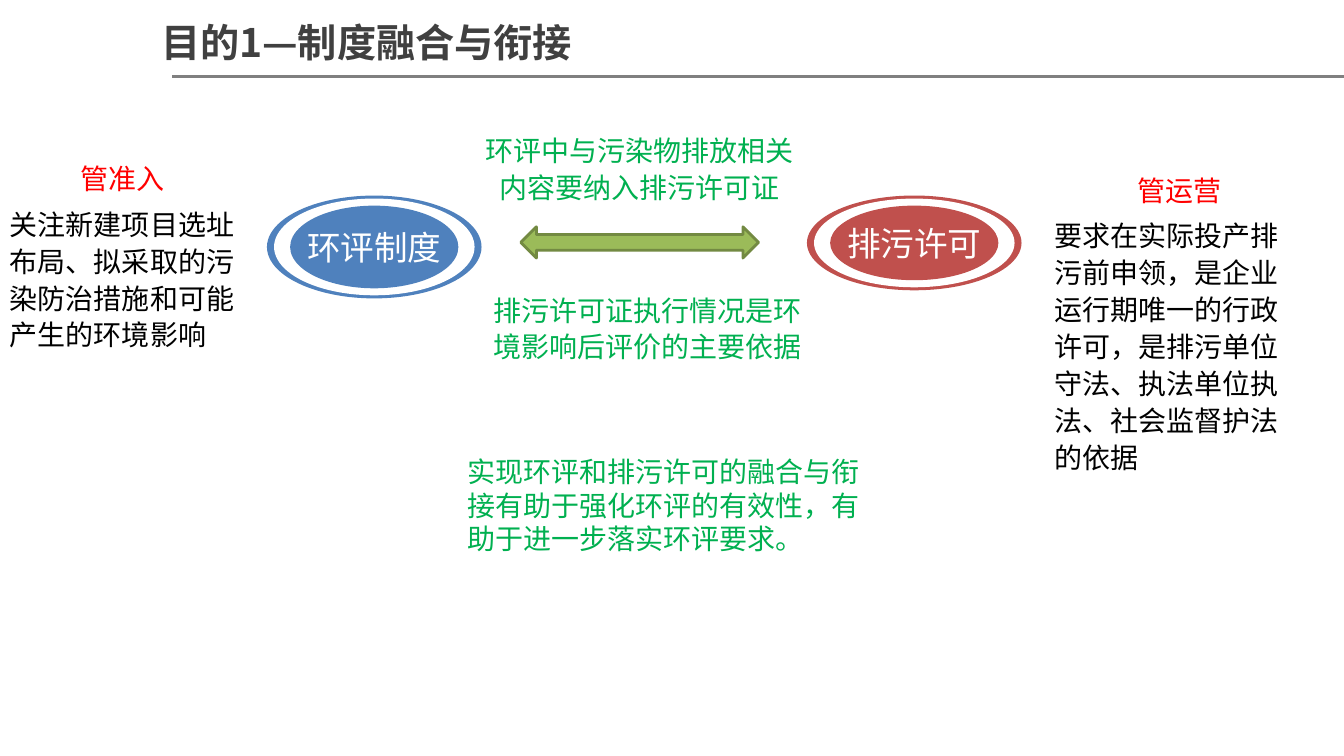
"""Build the slide on merging environmental assessment and discharge permits."""
import pptx
import pptx.dml.color
import pptx.enum.shapes
import pptx.enum.text
import pptx.oxml
import pptx.oxml.ns
import pptx.util

THEME = {
    "font": "Noto Sans CJK SC", "oval_font": "Arial",
    "title_size": 28, "oval_size": 24, "body_size": 20,
    "title": "404040", "rule": "808080", "heading": "FF0000", "body": "000000",
    "note": "00B050", "white": "FFFFFF", "assessment": "4F81BD",
    "permit": "C0504D", "arrow": "9BBB59", "arrow_line": "738A42",
}
PX = 9144
SLIDE = (1334, 750)
RULE = (171, 76, 1334, 76)
ARROW = (517, 225, 236, 31)
TITLE = ("目的1—制度融合与衔接", (150, 13, 635, 57))
COLUMNS = [
    ("管准入", "关注新建项目选址布局、拟采取的污染防治措施和可能产生的环境影响",
     (0, 123, 244, 260)),
    ("管运营", "要求在实际投产排污前申领，是企业运行期唯一的行政许可，"
     "是排污单位守法、执法单位执法、社会监督护法的依据", (1037, 170, 268, 299)),
]
LINKS = [
    ("环评中与污染物排放相关内容要纳入排污许可证", (462, 115, 346, 102)),
    ("排污许可证执行情况是环境影响后评价的主要依据", (470, 273, 346, 102)),
]
CONCLUSION = ("实现环评和排污许可的融合与衔接有助于强化环评的有效性，"
              "有助于进一步落实环评要求。", (454, 446, 410, 111))
OVALS = [
    ("环评制度", "assessment", (265, 194, 213, 102)),
    ("排污许可", "permit", (801, 194, 213, 94)),
]
RING_INSETS = [(0, 0), (7, 3), (23, 10)]


def emu(lengths):
    return [pptx.util.Emu(length * PX) for length in lengths]


def color(name):
    return pptx.dml.color.RGBColor.from_string(THEME[name])


def add_run(paragraph, text, color_name, size="body_size", font="font", bold=False):
    run = paragraph.add_run()
    run.text = text
    run.font.size = pptx.util.Pt(THEME[size])
    run.font.bold = bold
    run.font.color.rgb = color(color_name)
    run.font.name = THEME[font]
    east_asian = pptx.oxml.parse_xml(
        f'<a:ea {pptx.oxml.ns.nsdecls("a")} typeface="{THEME["font"]}"/>')
    run.font._element.find(pptx.oxml.ns.qn("a:latin")).addnext(east_asian)


def add_text(slide, box, middle=False):
    frame = slide.shapes.add_textbox(*emu(box)).text_frame
    frame.word_wrap = True
    if middle:
        frame.vertical_anchor = pptx.enum.text.MSO_ANCHOR.MIDDLE
        frame.paragraphs[0].alignment = pptx.enum.text.PP_ALIGN.CENTER
        frame.paragraphs[0].line_spacing = 1.1
    return frame


def add_filled(slide, kind, box, fill, line=None):
    shape = slide.shapes.add_shape(kind, *emu(box))
    shape.shadow.inherit = False
    shape.fill.solid()
    shape.fill.fore_color.rgb = color(fill)
    if line:
        shape.line.color.rgb = color(line)
        shape.line.width = pptx.util.Pt(2)
    else:
        shape.line.fill.background()
    return shape


def add_ringed_oval(slide, text, fill, box):
    left, top, width, height = box
    for (dx, dy), layer in zip(RING_INSETS, (fill, "white", fill)):
        inner = (left + dx, top + dy, width - 2 * dx, height - 2 * dy)
        shape = add_filled(slide, pptx.enum.shapes.MSO_SHAPE.OVAL, inner, layer)
    frame = shape.text_frame
    frame.word_wrap = False
    frame.margin_left = frame.margin_right = frame.margin_top = frame.margin_bottom = 0
    frame.vertical_anchor = pptx.enum.text.MSO_ANCHOR.MIDDLE
    frame.paragraphs[0].alignment = pptx.enum.text.PP_ALIGN.CENTER
    add_run(frame.paragraphs[0], text, "white", "oval_size", "oval_font")


def main():
    presentation = pptx.Presentation()
    presentation.slide_width, presentation.slide_height = emu(SLIDE)
    slide = presentation.slides.add_slide(presentation.slide_layouts[6])

    rule = slide.shapes.add_connector(
        pptx.enum.shapes.MSO_CONNECTOR.STRAIGHT, *emu(RULE))
    rule.line.color.rgb = color("rule")
    rule.line.width = pptx.util.Pt(2)
    rule._element.spPr.append(pptx.oxml.parse_xml(
        f'<a:effectLst {pptx.oxml.ns.nsdecls("a")}/>'))

    text, box = TITLE
    add_run(add_text(slide, box).paragraphs[0], text, "title", "title_size", bold=True)

    for heading, body, box in COLUMNS:
        frame = add_text(slide, box, middle=True)
        add_run(frame.paragraphs[0], heading, "heading")
        paragraph = frame.add_paragraph()
        paragraph.line_spacing = 1.1
        paragraph.space_before = pptx.util.Pt(6)
        add_run(paragraph, body, "body")

    for text, fill, box in OVALS:
        add_ringed_oval(slide, text, fill, box)
    for text, box in LINKS:
        add_run(add_text(slide, box, middle=True).paragraphs[0], text, "note")
    add_filled(slide, pptx.enum.shapes.MSO_SHAPE.LEFT_RIGHT_ARROW, ARROW,
               "arrow", "arrow_line")

    text, box = CONCLUSION
    add_run(add_text(slide, box).paragraphs[0], text, "note")
    presentation.save("out.pptx")


if __name__ == "__main__":
    main()
